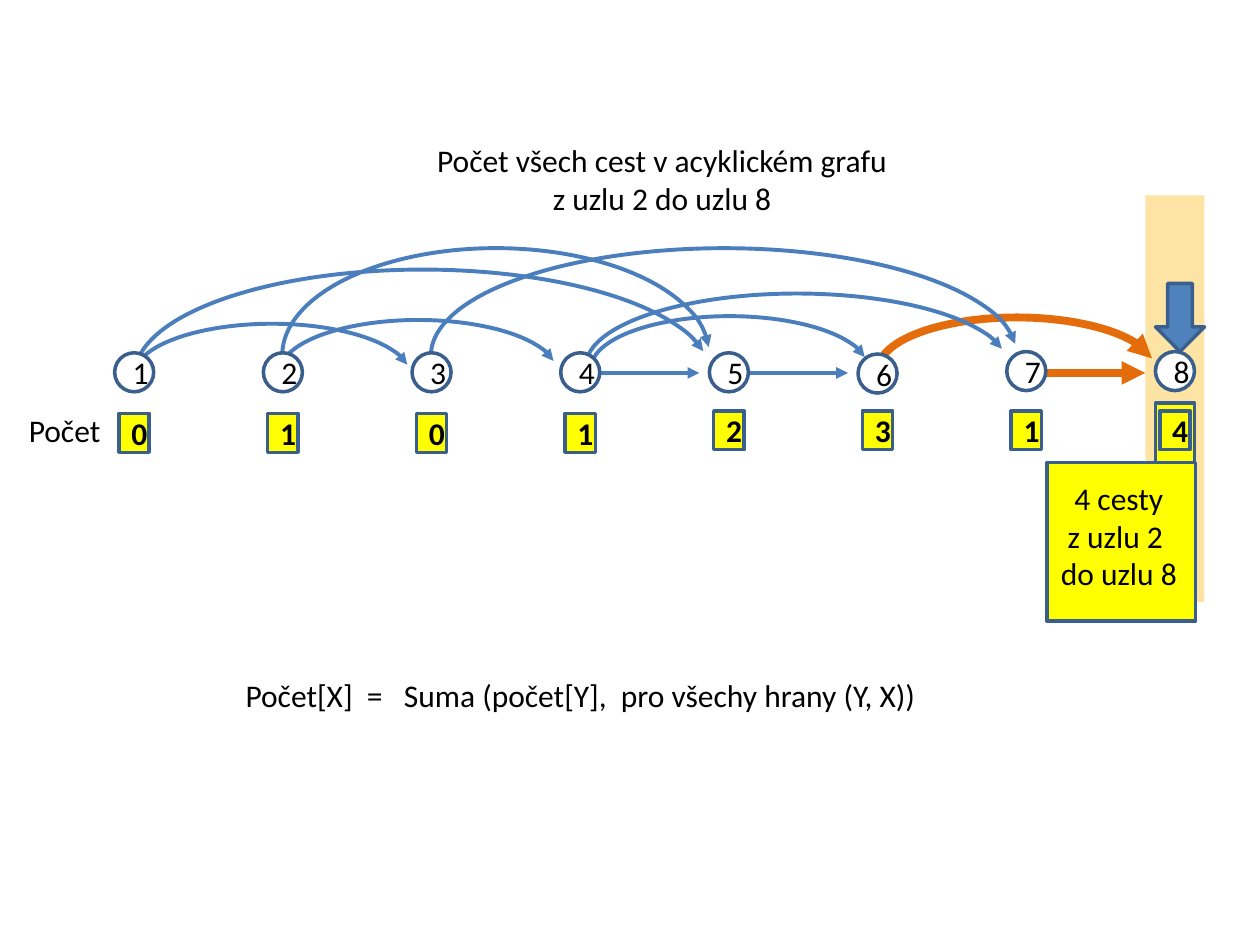
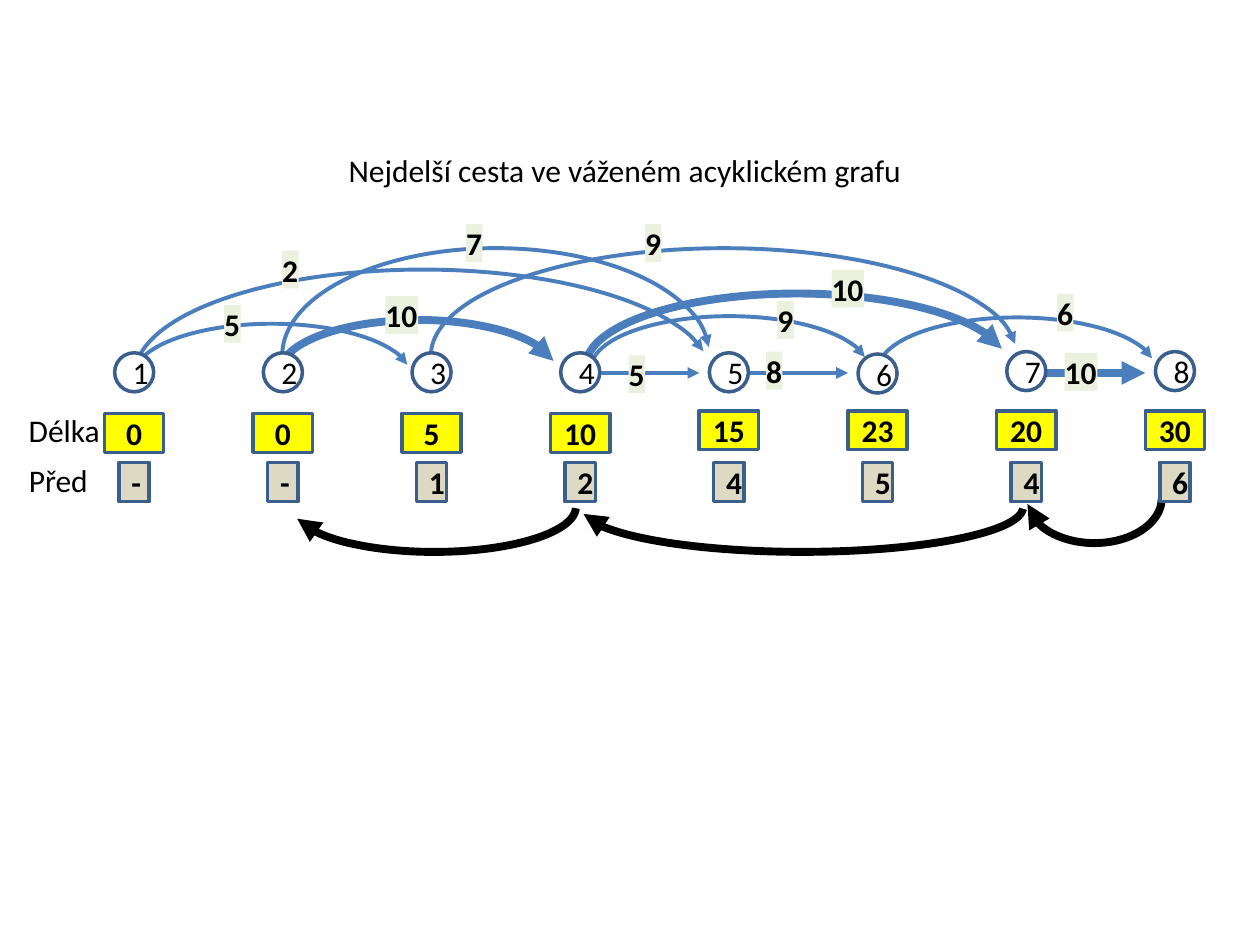
"""Two slides on counting paths and finding the longest path in an acyclic graph."""
import pptx
import pptx.dml.color
import pptx.enum.shapes
import pptx.enum.text
import pptx.oxml.ns
import pptx.util
from lxml import etree

SHAPE = pptx.enum.shapes.MSO_SHAPE
ANCHOR = pptx.enum.text.MSO_ANCHOR
ALIGN = pptx.enum.text.PP_ALIGN
COLORS = {"edge": "4B7EBC", "outline": "3A5F8C", "arrow": "4F81BD", "value": "FFFF00",
          "before": "DDD9C3", "weight": "EBF1DE", "column": "FEE4A4", "active": "E46C0A",
          "text": "000000", "node": "FFFFFF", "back": "000000"}
FONT, TEXT_SIZE = "Calibri", 18
THIN, THICK, OUTLINE = 2.25, 4.5, 2
ARC_START, ARC_END, LATE_END = 108.25, 213.11, 214.65

FIRST_NODE, NODE_STEP, NODE_SIZE = 0.91, 1.18, 0.31
NODE_TOPS = [2.8, 2.8, 2.8, 2.8, 2.8, 2.81, 2.79, 2.79]
VALUE_TOPS = [3.28] * 4 + [3.26] * 4
BEFORE_TOPS = [3.67] * 8
NARROW, WIDE = 0.24, 0.47
EDGE_TOP, EDGE_LENGTH = 2.96, 0.79

ARC_EDGES = {
    (1, 3): (1.06, 2.57, 2.2, 0.83, ARC_END),
    (1, 5): (1.07, 2.14, 4.57, 1.67, ARC_END),
    (2, 5): (2.24, 1.97, 3.39, 1.7, LATE_END),
    (6, 8): (6.97, 2.52, 2.2, 0.83, ARC_END),
    (4, 6): (4.69, 2.51, 2.2, 0.83, ARC_END),
    (3, 7): (3.42, 1.97, 4.65, 1.7, LATE_END),
    (4, 7): (4.65, 2.33, 3.35, 1.15, ARC_END),
    (2, 4): (2.22, 2.54, 2.2, 0.83, ARC_END),
}
STRAIGHT_EDGES = [(4, 5), (5, 6), (7, 8)]

COUNT = {
    "title": ["Počet všech cest v acyklickém grafu", "z uzlu 2 do uzlu 8"],
    "title_box": (3.35, 1.07, 3.81, 0.71),
    "styled_edges": {(6, 8): "active", (7, 8): "active"},
    "values": ["0", "1", "0", "1", "2", "3", "1", "4"],
    "result": ["4 cesty", "z uzlu 2 ", "do uzlu 8"],
    "formula": "Počet[X]  =   Suma (počet[Y],  pro všechy hrany (Y, X))",
}
LONGEST = {
    "title": ["Nejdelší cesta ve váženém acyklickém grafu"],
    "title_box": (2.64, 1.15, 4.64, 0.4),
    "styled_edges": {(2, 4): "edge", (4, 7): "edge", (7, 8): "edge"},
    "values": ["0", "0", "5", "10", "15", "23", "20", "30"],
    "before": ["-", "-", "1", "2", "4", "5", "4", "6"],
    "weights": [("2", 2.24, 1.99), ("10", 3.06, 2.35), ("7", 3.7, 1.78), ("9", 5.12, 1.78),
                ("6", 8.39, 2.33), ("10", 6.6, 2.14), ("9", 6.17, 2.39), ("8", 6.08, 2.79),
                ("5", 4.99, 2.82), ("10", 8.45, 2.8), ("5", 1.78, 2.42)],
    "way_back": [(8.15, 3.6, 1.07, 0.71, ARC_END), (4.61, 3.67, 3.51, 0.71, 214.94),
                 (2.32, 3.67, 2.25, 0.71, ARC_END)],
}


def inches(*lengths):
    return [pptx.util.Inches(length) for length in lengths]


def rgb(name):
    return pptx.dml.color.RGBColor.from_string(COLORS[name])


def write(frame, lines, align=ALIGN.CENTER, bold=False):
    for number, line in enumerate(lines):
        paragraph = frame.add_paragraph() if number else frame.paragraphs[0]
        paragraph.alignment = align
        run = paragraph.add_run()
        run.text = line
        run.font.name, run.font.size, run.font.bold = FONT, pptx.util.Pt(TEXT_SIZE), bold
        run.font.color.rgb = rgb("text")


def add_filled(slide, kind, box, fill, outline="outline"):
    shape = slide.shapes.add_shape(kind, *inches(*box))
    shape.shadow.inherit = False
    shape.fill.solid()
    shape.fill.fore_color.rgb = rgb(fill)
    if outline:
        shape.line.color.rgb = rgb(outline)
        shape.line.width = pptx.util.Pt(OUTLINE)
    else:
        shape.line.fill.background()
    return shape


def add_text(slide, box, lines, align=ALIGN.LEFT, wrap=False):
    frame = slide.shapes.add_textbox(*inches(*box)).text_frame
    frame.word_wrap = wrap
    write(frame, lines, align)


def point_line(line, color, width):
    line.color.rgb = rgb(color)
    line.width = pptx.util.Pt(width)
    outline = line._get_or_add_ln()
    etree.SubElement(outline, pptx.oxml.ns.qn("a:tailEnd"), type="triangle")


def add_arc(slide, place, color, width, rotation=0):
    *box, end = place
    arc = slide.shapes.add_shape(SHAPE.ARC, *inches(*box))
    arc.shadow.inherit = False
    arc.fill.background()
    arc.adjustments[0], arc.adjustments[1] = ARC_START, end
    arc.rotation = rotation
    point_line(arc.line, color, width)


def add_straight(slide, start, color, width):
    left = FIRST_NODE + (start - 1) * NODE_STEP + NODE_SIZE
    edge = slide.shapes.add_connector(pptx.enum.shapes.MSO_CONNECTOR.STRAIGHT,
                                      *inches(left, EDGE_TOP, left + EDGE_LENGTH, EDGE_TOP))
    point_line(edge.line, color, width)
    etree.SubElement(edge._element.spPr, pptx.oxml.ns.qn("a:effectLst"))


def add_row(slide, kind, labels, tops, width, fill, bold=True):
    for number, (label, top) in enumerate(zip(labels, tops)):
        left = FIRST_NODE + number * NODE_STEP + (NODE_SIZE - width) / 2
        cell = add_filled(slide, kind, (left, top, width, NODE_SIZE), fill)
        cell.text_frame.vertical_anchor = ANCHOR.MIDDLE
        write(cell.text_frame, [label], bold=bold)


def add_graph(slide, content):
    title = slide.shapes.title
    title.left, title.top, title.width, title.height = inches(*content["title_box"])
    frame = title.text_frame
    frame.auto_size = pptx.enum.text.MSO_AUTO_SIZE.NONE
    frame.word_wrap, frame.vertical_anchor = False, ANCHOR.TOP
    write(frame, content["title"])
    styled = content["styled_edges"]
    for edge in [*ARC_EDGES, *STRAIGHT_EDGES]:
        color, width = (styled[edge], THICK) if edge in styled else ("edge", THIN)
        if edge in ARC_EDGES:
            add_arc(slide, ARC_EDGES[edge], color, width)
        else:
            add_straight(slide, edge[0], color, width)
    add_row(slide, SHAPE.OVAL, "12345678", NODE_TOPS, NODE_SIZE, "node", bold=False)


def build_count(slide):
    add_filled(slide, SHAPE.RECTANGLE, (9.09, 1.55, 0.47, 3.23), "column", None)
    add_filled(slide, SHAPE.RECTANGLE, (8.31, 3.67, 1.18, 1.26), "value")
    add_filled(slide, SHAPE.RECTANGLE, (9.17, 3.2, 0.31, 0.47), "value")
    add_graph(slide, COUNT)
    add_filled(slide, SHAPE.DOWN_ARROW, (9.17, 2.25, 0.39, 0.54), "arrow")
    add_text(slide, (8.31, 3.75, 1.14, 1.01), COUNT["result"], ALIGN.CENTER)
    add_row(slide, SHAPE.RECTANGLE, COUNT["values"], VALUE_TOPS, NARROW, "value")
    add_text(slide, (0.13, 3.21, 0.78, 0.4), ["Počet"])
    add_text(slide, (1.85, 5.32, 5.91, 0.4), [COUNT["formula"]], wrap=True)


def build_longest(slide):
    add_graph(slide, LONGEST)
    for weight, left, top in LONGEST["weights"]:
        label = add_filled(slide, SHAPE.RECTANGLE, (left, top, 0.13 * len(weight), 0.3),
                           "weight", None)
        frame = label.text_frame
        frame.margin_left = frame.margin_right = frame.margin_top = frame.margin_bottom = 0
        frame.word_wrap, frame.vertical_anchor = False, ANCHOR.MIDDLE
        write(frame, [weight], ALIGN.LEFT, bold=True)
    for place in LONGEST["way_back"]:
        add_arc(slide, place, "back", THICK, rotation=180)
    add_row(slide, SHAPE.RECTANGLE, LONGEST["values"], VALUE_TOPS, WIDE, "value")
    add_row(slide, SHAPE.RECTANGLE, LONGEST["before"], BEFORE_TOPS, NARROW, "before")
    add_text(slide, (0.13, 3.61, 0.68, 0.4), ["Před"])
    add_text(slide, (0.13, 3.21, 0.77, 0.4), ["Délka"])


def main():
    deck = pptx.Presentation()
    deck.slide_width, deck.slide_height = inches(10, 7.5)
    title_only = deck.slide_layouts[5]
    for build in (build_count, build_longest):
        build(deck.slides.add_slide(title_only))
    deck.save("out.pptx")


if __name__ == "__main__":
    main()
